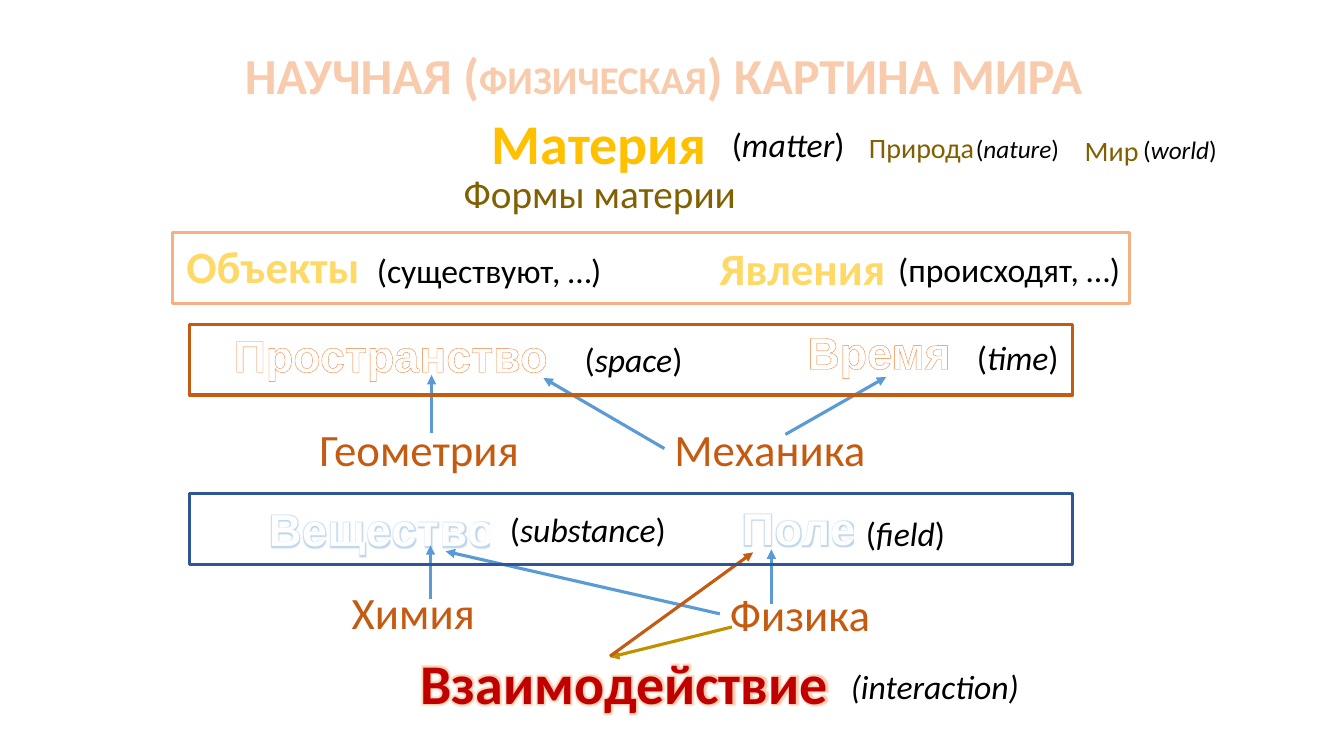
from lxml.etree import SubElement, fromstring
from pptx import Presentation
from pptx.dml.color import RGBColor
from pptx.enum.shapes import MSO_CONNECTOR as CONN, MSO_SHAPE as SHAPE
from pptx.enum.text import MSO_AUTO_SIZE as AUTO
from pptx.oxml.ns import qn
from pptx.util import Inches, Pt

BLACK = RGBColor(0x00, 0x00, 0x00)
WHITE = RGBColor(0xFF, 0xFF, 0xFF)
OFF_WHITE = RGBColor(0xFE, 0xFE, 0xFE)
PEACH = RGBColor(0xF8, 0xCB, 0xAD)
SALMON = RGBColor(0xF4, 0xB1, 0x83)
ORANGE = RGBColor(0xED, 0x7D, 0x31)
RUST = RGBColor(0xC5, 0x5A, 0x11)
RED = RGBColor(0xC0, 0x00, 0x00)
GOLD = RGBColor(0xFF, 0xC0, 0x00)
OCHRE = RGBColor(0xBF, 0x90, 0x00)
OLIVE = RGBColor(0x80, 0x60, 0x00)
BLUE = RGBColor(0x5B, 0x9B, 0xD5)
NAVY = RGBColor(0x2F, 0x55, 0x97)

NS = 'xmlns:a="http://schemas.openxmlformats.org/drawingml/2006/main"'
GOLD_FADE = fromstring(
    f'<a:gradFill {NS}><a:gsLst>'
    '<a:gs pos="0"><a:srgbClr val="FFC000"/></a:gs>'
    '<a:gs pos="4000"><a:srgbClr val="FFD966"/></a:gs>'
    '<a:gs pos="87000"><a:srgbClr val="FFF2CC"/></a:gs>'
    '</a:gsLst><a:lin ang="5400000"/></a:gradFill>')
SHADOW = ('<a:outerShdw blurRad="50800" dist="38100" dir="2700000">'
          '<a:srgbClr val="000000"><a:alpha val="60000"/></a:srgbClr></a:outerShdw>')
GLOW = '<a:glow rad="{}"><a:srgbClr val="{}"><a:alpha val="40000"/></a:srgbClr></a:glow>'

prs = Presentation()
prs.slide_width, prs.slide_height = Inches(13.33), Inches(7.5)
s = prs.slides.add_slide(prs.slide_layouts[6])


def add_text(x, y, w, runs, wrap=False):
    """Add a one-line box, as tall as its largest run; runs are (text, size, color, style)."""
    h = 0.1 + max(size for _, size, _, _ in runs) * 1.2 / 72
    tf = s.shapes.add_textbox(Inches(x), Inches(y), Inches(w), Inches(h)).text_frame
    tf.word_wrap = wrap
    tf.auto_size = AUTO.SHAPE_TO_FIT_TEXT
    p = tf.paragraphs[0]
    for text, size, color, style in runs:
        r = p.add_run()
        r.text = text
        f = r.font
        f.size, f.name, f.color.rgb = Pt(size), style.get("font", "Calibri"), color
        f.bold, f.italic = style.get("bold", False), style.get("italic", False)
        rPr = r._r.get_or_add_rPr()
        if "spacing" in style:
            rPr.set("spc", str(style["spacing"]))
        if "fade" in style:
            rPr.replace(rPr.find(qn("a:solidFill")), fromstring(style["fade"]))
        if "outline" in style:
            line_color, width = style["outline"]
            rPr.insert(0, fromstring(
                f'<a:ln {NS} w="{Pt(width)}"><a:solidFill>'
                f'<a:srgbClr val="{line_color}"/></a:solidFill></a:ln>'))
        if "effect" in style:
            rPr.find(qn("a:latin")).addprevious(
                fromstring(f'<a:effectLst {NS}>{style["effect"]}</a:effectLst>'))


FADE_XML = (f'<a:gradFill {NS}>' + "".join(
    ["<a:gsLst>"] + [f'<a:gs pos="{pos}"><a:srgbClr val="{c}"/></a:gs>' for pos, c in
                     ((0, "FFC000"), (4000, "FFD966"), (87000, "FFF2CC"))])
    + '</a:gsLst><a:lin ang="5400000"/></a:gradFill>')

PLAIN = {}
BOLD = {"bold": True}
ITALIC = {"italic": True}
TITLE = {"bold": True, "outline": (ORANGE, 1.75), "effect": SHADOW}
FADED = {"bold": True, "outline": (GOLD, 1), "fade": FADE_XML}
HOLLOW = {"bold": True, "font": "Arial", "outline": (ORANGE, 0.52)}
GLOWING = {"bold": True, "font": "Arial", "outline": (BLUE, 0.75), "spacing": 50,
           "effect": GLOW.format(38100, BLUE)}
HALO = {"bold": True, "effect": GLOW.format(63500, ORANGE)}

add_text(2.33, 0.39, 8.6, [("НАУЧНАЯ (", 36, PEACH, TITLE),
                           ("ФИЗИЧЕСКАЯ", 28, PEACH, TITLE),
                           (") КАРТИНА МИРА", 36, PEACH, TITLE)])

for term, x, y, w, size, color, style in (
        ("Материя", 4.78, 1.03, 2.36, 40, GOLD, BOLD),
        ("Природа", 8.52, 1.25, 1.25, 20, OLIVE, PLAIN),
        ("Мир", 10.66, 1.27, 0.74, 20, OLIVE, PLAIN),
        ("Формы материи", 4.5, 1.63, 2.93, 28, OLIVE, PLAIN),
        ("Объекты", 1.75, 2.32, 1.99, 32, GOLD, FADED),
        ("(существуют, …)", 3.64, 2.43, 2.53, 24, BLACK, PLAIN),
        ("Явления", 7.04, 2.34, 1.86, 32, GOLD, FADED),
        ("(происходят, …)", 8.81, 2.42, 2.42, 24, BLACK, PLAIN),
        ("Пространство", 2.22, 3.2, 3.34, 32, WHITE, HOLLOW),
        ("Время", 7.91, 3.17, 1.76, 32, WHITE, HOLLOW),
        ("Геометрия", 3.07, 4.13, 2.2, 32, RUST, PLAIN),
        ("Механика", 6.59, 4.13, 2.12, 32, RUST, PLAIN),
        ("Вещество", 2.57, 4.93, 2.46, 32, OFF_WHITE, GLOWING),
        ("Поле", 7.26, 4.92, 1.34, 32, OFF_WHITE, GLOWING),
        ("Химия", 3.39, 5.75, 1.43, 32, RUST, PLAIN),
        ("Физика", 7.14, 5.77, 1.61, 32, RUST, PLAIN),
        ("Взаимодействие", 4.07, 6.38, 4.27, 40, RED, HALO)):
    add_text(x, y, w, [(term, size, color, style)])

for word, x, y, w, size in (
        ("matter", 7.16, 1.18, 1.34, 24),
        ("nature", 9.58, 1.27, 1.09, 18),
        ("world", 11.24, 1.28, 0.94, 18),
        ("space", 5.7, 3.31, 1.25, 24),
        ("time", 9.59, 3.29, 1.02, 24),
        ("substance", 4.96, 5, 1.83, 24),
        ("field", 8.49, 5.04, 1, 24)):
    add_text(x, y, w, [("(", size, BLACK, PLAIN), (word, size, BLACK, ITALIC),
                       (")", size, BLACK, PLAIN)])
add_text(8.34, 6.56, 1.92, [("(interaction)", 24, BLACK, ITALIC)], wrap=True)

for x1, y1, x2, y2, color in (
        (4.28, 4.3, 4.28, 3.72, BLUE),
        (6.59, 4.45, 5.39, 3.75, BLUE),
        (7.79, 4.31, 8.79, 3.74, BLUE),
        (7.65, 5.99, 7.65, 5.45, BLUE),
        (7.14, 6.09, 4.42, 5.47, BLUE),
        (4.27, 5.94, 4.27, 5.41, BLUE),
        (7.26, 6.22, 6.05, 6.52, OCHRE),
        (6.05, 6.51, 7.47, 5.48, RUST)):
    arrow = s.shapes.add_connector(CONN.STRAIGHT, Inches(x1), Inches(y1), Inches(x2), Inches(y2))
    arrow.line.color.rgb, arrow.line.width = color, Pt(2.25)
    SubElement(arrow.line._get_or_add_ln(), qn("a:tailEnd"), type="triangle")
    SubElement(arrow._element.spPr, qn("a:effectLst"))

for x, y, w, color in ((1.88, 3.22, 8.76, RUST), (1.88, 4.9, 8.76, NAVY),
                       (1.71, 2.31, 9.49, SALMON)):
    frame = s.shapes.add_shape(SHAPE.RECTANGLE, Inches(x), Inches(y), Inches(w), Inches(0.7))
    frame.shadow.inherit = False
    frame.fill.background()
    frame.line.color.rgb, frame.line.width = color, Pt(2.25)

prs.save("out.pptx")
